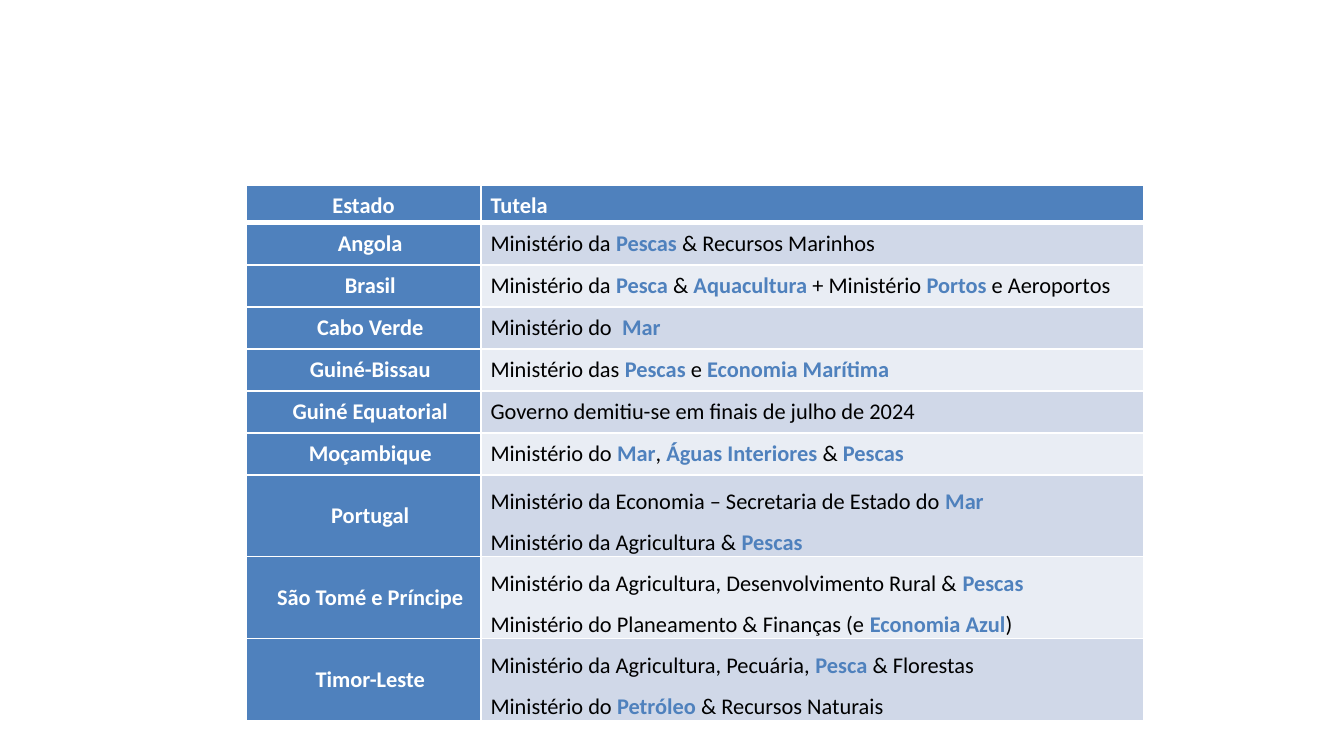
from lxml.etree import SubElement
from pptx import Presentation
from pptx.dml.color import RGBColor
from pptx.enum.text import MSO_ANCHOR, PP_ALIGN
from pptx.oxml.ns import qn
from pptx.util import Inches, Pt

SLIDE_WIDTH = Inches(10)
SLIDE_HEIGHT = SLIDE_WIDTH * 9 // 16
BLUE, WHITE, BLACK = "4F81BD", "FFFFFF", "000000"
BANDS = ("D0D8E8", "E9EDF4")
COLUMN_SHARES = (0.175, 0.493)
HEADER_SHARE, SINGLE_SHARE, DOUBLE_SHARE = 1 / 20, 1 / 18, 0.085
HEADINGS = ("Estado", "Tutela")
MINISTRIES = (
    ("Angola", "Ministério da *Pescas* & Recursos Marinhos"),
    ("Brasil", "Ministério da *Pesca* & *Aquacultura* + Ministério *Portos* e Aeroportos"),
    ("Cabo Verde", "Ministério do  *Mar*"),
    ("Guiné-Bissau", "Ministério das *Pescas* e *Economia Marítima*"),
    ("Guiné Equatorial", "Governo demitiu-se em finais de julho de 2024"),
    ("Moçambique", "Ministério do *Mar*, *Águas Interiores *& *Pescas*"),
    ("Portugal", "Ministério da Economia – Secretaria de Estado do *Mar*\n"
                 "Ministério da Agricultura & *Pescas*"),
    ("São Tomé e Príncipe", "Ministério da Agricultura, Desenvolvimento Rural & *Pescas*\n"
                            "Ministério do Planeamento & Finanças (e *Economia Azul*)"),
    ("Timor-Leste", "Ministério da Agricultura, Pecuária, *Pesca* & Florestas\n"
                    "Ministério do *Petróleo* & Recursos Naturais"),
)


def color(value):
    """Turn a hex string into a colour."""
    return RGBColor.from_string(value)


def set_borders(cell, bottom_width):
    """Draw white borders around a cell."""
    properties = cell._tc.get_or_add_tcPr()
    for side, width in (("L", 1), ("R", 1), ("T", 1), ("B", bottom_width)):
        line = SubElement(properties, qn(f"a:ln{side}"), w=str(Pt(width)))
        fill = SubElement(line, qn("a:solidFill"))
        SubElement(fill, qn("a:srgbClr"), val=WHITE)


def style_cell(cell, fill, bottom_width=1):
    """Set the fill, borders, margins and anchor of a cell."""
    set_borders(cell, bottom_width)
    cell.fill.solid()
    cell.fill.fore_color.rgb = color(fill)
    cell.margin_left = cell.margin_right = Inches(0.07)
    cell.margin_top = cell.margin_bottom = 0
    cell.vertical_anchor = MSO_ANCHOR.MIDDLE


def style_paragraph(paragraph, alignment, line_spacing=1.0, space_after=8):
    """Set the spacing, alignment and shared font of a paragraph."""
    paragraph.alignment = alignment
    paragraph.line_spacing = line_spacing
    paragraph.space_before = Pt(3)
    paragraph.space_after = Pt(space_after)
    paragraph.font.name = "Calibri"
    paragraph.font.size = Pt(12)


def add_run(paragraph, text, text_color, bold):
    """Add one coloured run to a paragraph."""
    run = paragraph.add_run()
    run.text = text
    run.font.bold = bold
    run.font.color.rgb = color(text_color)


def fill_header(cell, text, alignment):
    """Write a column heading."""
    style_cell(cell, BLUE, bottom_width=3)
    paragraph = cell.text_frame.paragraphs[0]
    style_paragraph(paragraph, alignment, line_spacing=1.15)
    add_run(paragraph, text, WHITE, True)


def fill_state(cell, text):
    """Write the name of a state."""
    style_cell(cell, BLUE)
    paragraph = cell.text_frame.paragraphs[0]
    paragraph._p.get_or_add_pPr().set("marL", str(Inches(0.1)))
    style_paragraph(paragraph, PP_ALIGN.CENTER)
    add_run(paragraph, text, WHITE, True)


def fill_ministry(cell, text, band, space_after):
    """Write ministries, with the words between asterisks highlighted."""
    style_cell(cell, band)
    paragraph = cell.text_frame.paragraphs[0]
    line_spacing = 1.5 if "\n" in text else 1.0
    style_paragraph(paragraph, PP_ALIGN.LEFT, line_spacing, space_after)
    for number, line in enumerate(text.split("\n")):
        if number:
            paragraph.add_line_break()
        for index, part in enumerate(line.split("*")):
            highlighted = index % 2 == 1
            if part:
                add_run(paragraph, part, BLUE if highlighted else BLACK, highlighted)


def add_ministry_table(slide):
    """Add the table of states and their ministries."""
    row_shares = [HEADER_SHARE] + [
        DOUBLE_SHARE if "\n" in ministry else SINGLE_SHARE for _, ministry in MINISTRIES
    ]
    table = slide.shapes.add_table(
        len(row_shares), len(COLUMN_SHARES),
        int(SLIDE_WIDTH * 0.183), int(SLIDE_HEIGHT * 0.245),
        int(SLIDE_WIDTH * sum(COLUMN_SHARES)), int(SLIDE_HEIGHT * sum(row_shares)),
    ).table
    for column, share in zip(table.columns, COLUMN_SHARES):
        column.width = int(SLIDE_WIDTH * share)
    for row, share in zip(table.rows, row_shares):
        row.height = int(SLIDE_HEIGHT * share)
    for column, alignment in enumerate((PP_ALIGN.CENTER, PP_ALIGN.LEFT)):
        fill_header(table.cell(0, column), HEADINGS[column], alignment)
    for index, (state, ministry) in enumerate(MINISTRIES):
        space_after = 12 if index == len(MINISTRIES) - 1 else 8
        fill_state(table.cell(index + 1, 0), state)
        fill_ministry(table.cell(index + 1, 1), ministry, BANDS[index % 2], space_after)


def main():
    """Build and save the presentation."""
    presentation = Presentation()
    presentation.slide_width, presentation.slide_height = SLIDE_WIDTH, SLIDE_HEIGHT
    slide = presentation.slides.add_slide(presentation.slide_layouts[6])
    add_ministry_table(slide)
    presentation.save("out.pptx")


if __name__ == "__main__":
    main()
